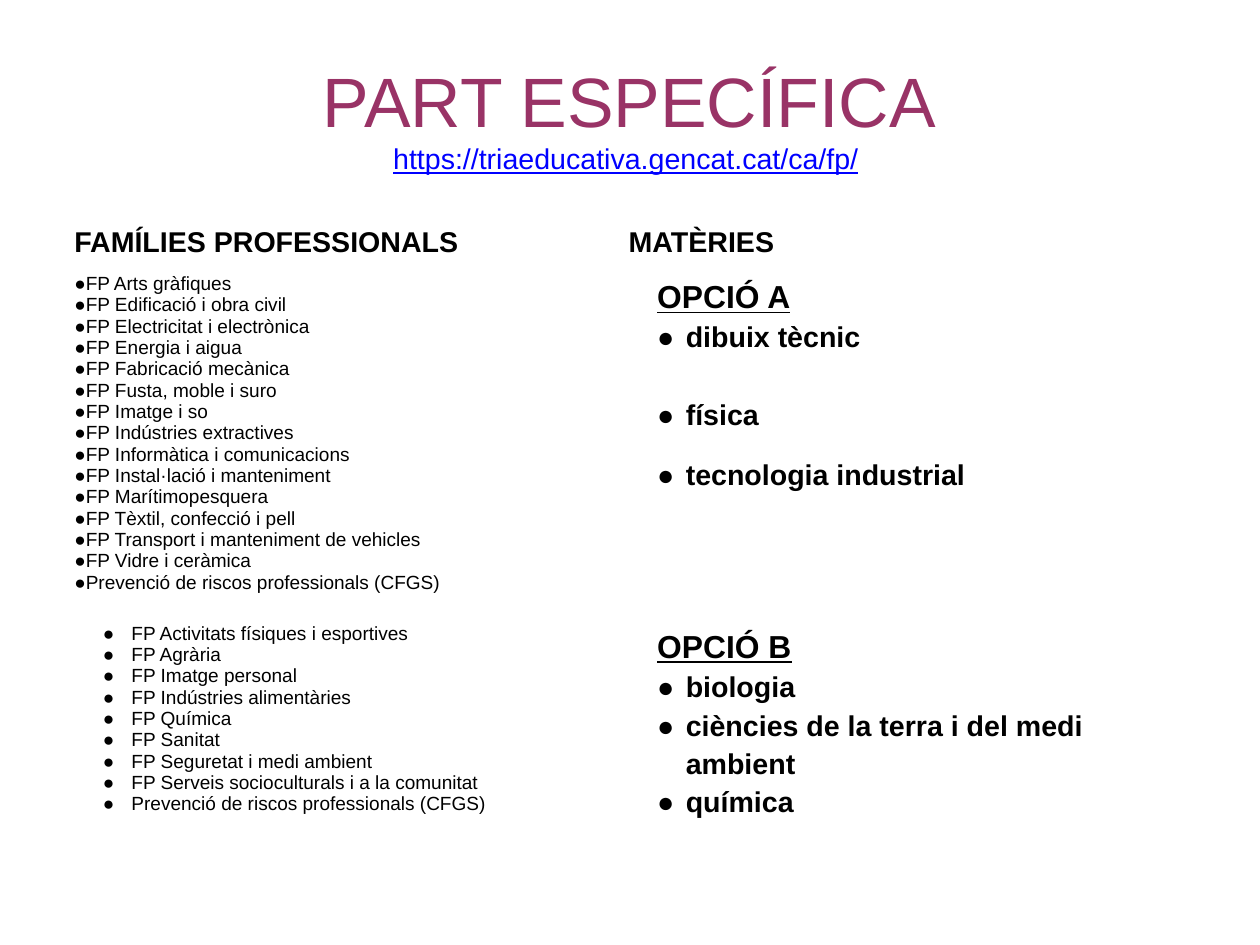
from dataclasses import dataclass

from lxml import etree
from pptx import Presentation
from pptx.dml.color import RGBColor
from pptx.enum.text import MSO_ANCHOR, MSO_AUTO_SIZE, PP_ALIGN
from pptx.oxml.ns import qn
from pptx.util import Inches, Pt

CENTER, JUSTIFY = PP_ALIGN.CENTER, PP_ALIGN.JUSTIFY
MIDDLE, NO_AUTOFIT = MSO_ANCHOR.MIDDLE, MSO_AUTO_SIZE.NONE
TITLE_ONLY = 5
CM_PER_INCH = 2.54


@dataclass(frozen=True)
class Theme:
    font: str = "Arial"
    title_color: str = "993366"
    link_color: str = "0000FF"
    text_color: str = "000000"
    background: str = "FFFFFF"
    title_size: int = 44
    option_size: int = 20
    heading_size: int = 18
    list_size: int = 12


TITLE = "PART ESPECÍFICA"
ADDRESS = "https://triaeducativa.gencat.cat/ca/fp/"
HEADINGS = ["FAMÍLIES PROFESSIONALS", "MATÈRIES"]
TECHNICAL_FAMILIES = [
    "FP Arts gràfiques",
    "FP Edificació i obra civil",
    "FP Electricitat i electrònica",
    "FP Energia i aigua",
    "FP Fabricació mecànica",
    "FP Fusta, moble i suro",
    "FP Imatge i so",
    "FP Indústries extractives",
    "FP Informàtica i comunicacions",
    "FP Instal·lació i manteniment",
    "FP Marítimopesquera",
    "FP Tèxtil, confecció i pell",
    "FP Transport i manteniment de vehicles",
    "FP Vidre i ceràmica",
    "Prevenció de riscos professionals (CFGS)",
]
SCIENCE_FAMILIES = [
    "FP Activitats físiques i esportives",
    "FP Agrària",
    "FP Imatge personal",
    "FP Indústries alimentàries",
    "FP Química",
    "FP Sanitat",
    "FP Seguretat i medi ambient",
    "FP Serveis socioculturals i a la comunitat",
    "Prevenció de riscos professionals (CFGS)",
]
# Each subject comes with the space before it, in points.
OPTION_A = [("dibuix tècnic", 0), ("física", 24.5), ("tecnologia industrial", 14)]
OPTION_B = [("biologia", 0), ("ciències de la terra i del medi ambient", 0), ("química", 0)]


class SlideBuilder:
    def __init__(self, deck, theme):
        self.theme = theme
        self.slide = deck.slides.add_slide(deck.slide_layouts[TITLE_ONLY])
        fill = self.slide.background.fill
        fill.solid()
        fill.fore_color.rgb = RGBColor.from_string(theme.background)

    def style(self, para, size, color=None, bold=False, underline=False):
        for span in para.runs:
            font = span.font
            font.name, font.size = self.theme.font, Pt(size)
            font.bold, font.underline = bold, underline
            font.color.rgb = RGBColor.from_string(color or self.theme.text_color)

    def indent(self, para, left, first, bullet=True):
        properties = para._p.get_or_add_pPr()
        properties.set("marL", str(Inches(left)))
        properties.set("indent", str(Inches(first)))
        if bullet:
            color = etree.SubElement(properties, qn("a:buClr"))
            etree.SubElement(color, qn("a:srgbClr"), val=self.theme.text_color)
            etree.SubElement(properties, qn("a:buFont"), typeface=self.theme.font)
            etree.SubElement(properties, qn("a:buChar"), char="●")

    def title(self, text, address, left, top, width, height):
        box = self.slide.shapes.title
        box.left, box.top, box.width, box.height = map(Inches, (left, top, width, height))
        frame = box.text_frame
        frame.text = f"{text}\n{address}"
        frame.auto_size, frame.vertical_anchor, frame.word_wrap = NO_AUTOFIT, MIDDLE, True
        frame.margin_left = frame.margin_right = frame.margin_top = frame.margin_bottom = 0
        heading, link = frame.paragraphs
        heading.alignment = link.alignment = CENTER
        link.add_run().text = " "
        self.style(heading, self.theme.title_size, self.theme.title_color)
        self.style(link, self.theme.heading_size, self.theme.link_color)
        link.runs[0].font.underline = True

    def table(self, left, top, widths, heights):
        frame = self.slide.shapes.add_table(
            len(heights), len(widths), Inches(left), Inches(top),
            Inches(sum(widths)), Inches(sum(heights)))
        table = frame.table
        table.first_row = table.horz_banding = False
        for column, width in zip(table.columns, widths):
            column.width = Inches(width)
        for row, height in zip(table.rows, heights):
            row.height = Inches(height)
        for cell in table.iter_cells():
            cell.fill.solid()
            cell.fill.fore_color.rgb = RGBColor.from_string(self.theme.background)
        return table

    def heading(self, cell, text):
        cell.text_frame.text = text
        self.style(cell.text_frame.paragraphs[0], self.theme.heading_size, bold=True)

    def families(self, cell, names, left, first, alignment=None):
        cell.text_frame.text = "\n".join(names)
        for para in cell.text_frame.paragraphs:
            para.alignment = alignment
            self.indent(para, left, first)
            self.style(para, self.theme.list_size)

    def option(self, cell, name, subjects):
        cell.text_frame.text = "\n".join([name] + [subject for subject, _ in subjects])
        heading, *items = cell.text_frame.paragraphs
        heading.line_spacing = 1.2
        self.indent(heading, 0.5, -0.25, bullet=False)
        self.style(heading, self.theme.option_size, bold=True, underline=True)
        for para, (_, gap) in zip(items, subjects):
            para.line_spacing, para.space_before = 1.2, Pt(gap)
            self.indent(para, 0.5, -0.25)
            self.style(para, self.theme.heading_size, bold=True)


def main():
    deck = Presentation()
    deck.slide_width, deck.slide_height = Inches(28 / CM_PER_INCH), Inches(21 / CM_PER_INCH)
    builder = SlideBuilder(deck, Theme())
    builder.title(TITLE, ADDRESS, 0.55, 0.33, 9.92, 1.38)

    table = builder.table(0.55, 1.93, widths=[4.85, 4.85], heights=[0.41, 3.06, 1.93])
    for column, text in enumerate(HEADINGS):
        builder.heading(table.cell(0, column), text)
    builder.families(table.cell(1, 0), TECHNICAL_FAMILIES, 0, -0.04)
    builder.families(table.cell(2, 0), SCIENCE_FAMILIES, 0.5, -0.25, JUSTIFY)
    builder.option(table.cell(1, 1), "OPCIÓ A", OPTION_A)
    builder.option(table.cell(2, 1), "OPCIÓ B", OPTION_B)
    deck.save("out.pptx")


if __name__ == "__main__":
    main()
